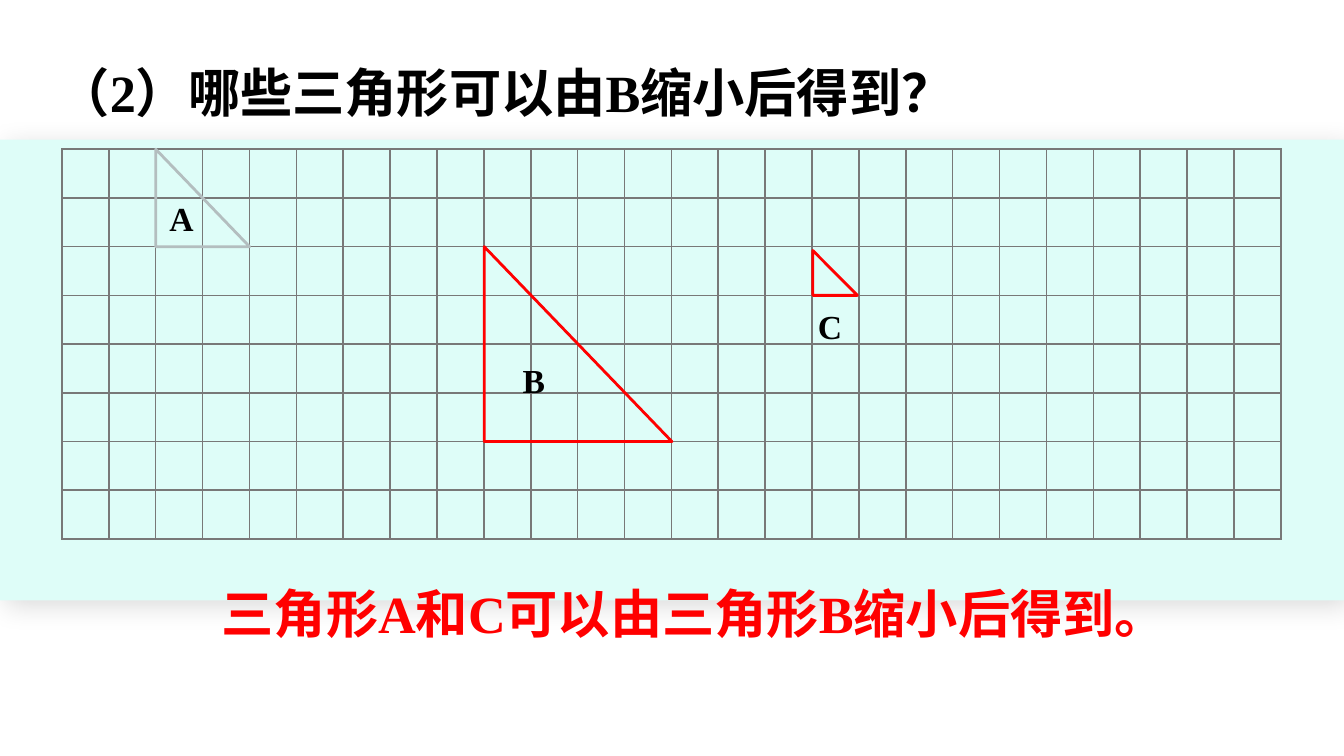
from dataclasses import dataclass

from lxml.etree import SubElement
from pptx import Presentation
from pptx.dml.color import RGBColor
from pptx.enum.shapes import MSO_SHAPE as Shape
from pptx.enum.text import MSO_AUTO_SIZE as AutoSize
from pptx.oxml.ns import qn
from pptx.util import Cm, Pt


@dataclass(frozen=True)
class Theme:
    band: str = "DEFDF8"
    grid: str = "787878"
    gray: str = "B3BEBF"
    red: str = "FF0000"
    black: str = "000000"
    font: str = "Times New Roman"
    sentence_size: int = 28
    label_size: int = 18
    grid_width: float = 1
    outline_width: float = 1.5


@dataclass(frozen=True)
class Grid:
    """Squared paper, in centimetres."""
    left: float = 1.17
    top: float = 2.82
    width: float = 23.06
    height: float = 7.37
    cols: int = 26
    rows: int = 8

    @property
    def cell_w(self) -> float:
        return self.width / self.cols

    @property
    def cell_h(self) -> float:
        return self.height / self.rows


@dataclass(frozen=True)
class Triangle:
    """Right-angled corner and size in grid cells, label place in centimetres."""
    name: str
    col: int
    row: int
    w: float
    h: float
    color: str
    label_left: float
    label_top: float


THEME = Theme()
GRID = Grid()
TRIANGLES = [
    Triangle("A", 2, 2, 2, 2, THEME.gray, 2.95, 3.61),
    Triangle("B", 9, 6, 4, 4, THEME.red, 9.63, 6.68),
    Triangle("C", 16, 3, 0.95, 0.92, THEME.red, 15.21, 5.66),
]


def rgb(color: str) -> RGBColor:
    return RGBColor.from_string(color)


def add_band(s) -> None:
    band = s.shapes.add_shape(Shape.RECTANGLE, 0, Cm(2.64), Cm(25.4), Cm(8.71))
    band.fill.solid()
    band.fill.fore_color.rgb = rgb(THEME.band)
    band.line.fill.background()
    effects = SubElement(band._element.spPr, qn("a:effectLst"))
    shadow = SubElement(effects, qn("a:outerShdw"), blurRad=str(Pt(15)),
                        dist=str(Pt(5)), dir=str(45 * 60000), rotWithShape="0")
    color = SubElement(shadow, qn("a:srgbClr"), val=THEME.black)
    SubElement(color, qn("a:alpha"), val="15000")


def set_borders(cell) -> None:
    tc_pr = cell._tc.get_or_add_tcPr()
    for side in ("lnL", "lnR", "lnT", "lnB"):
        ln = SubElement(tc_pr, qn(f"a:{side}"), w=str(Pt(THEME.grid_width)))
        SubElement(SubElement(ln, qn("a:solidFill")), qn("a:srgbClr"), val=THEME.grid)


def add_grid(s) -> None:
    frame = s.shapes.add_table(GRID.rows, GRID.cols, Cm(GRID.left), Cm(GRID.top),
                               Cm(GRID.width), Cm(GRID.height))
    table = frame.table
    table.first_row = table.horz_banding = False
    for col in table.columns:
        col.width = Cm(GRID.cell_w)
    for row in table.rows:
        row.height = Cm(GRID.cell_h)
    for cell in table.iter_cells():
        cell.margin_left = cell.margin_right = 0
        cell.margin_top = cell.margin_bottom = 0
        set_borders(cell)
        cell.fill.background()


def add_text(s, text: str, left: float, top: float, width: float, height: float,
             size: int, color: str = THEME.black, wrap: bool = True) -> None:
    tf = s.shapes.add_textbox(Cm(left), Cm(top), Cm(width), Cm(height)).text_frame
    tf.word_wrap = wrap
    tf.auto_size = AutoSize.SHAPE_TO_FIT_TEXT
    r = tf.paragraphs[0].add_run()
    r.text = text
    r.font.name = THEME.font
    r.font.size = Pt(size)
    r.font.bold = True
    r.font.color.rgb = rgb(color)


def add_triangle(s, t: Triangle) -> None:
    sp = s.shapes.add_shape(
        Shape.RIGHT_TRIANGLE,
        Cm(GRID.left + t.col * GRID.cell_w),
        Cm(GRID.top + (t.row - t.h) * GRID.cell_h),
        Cm(t.w * GRID.cell_w), Cm(t.h * GRID.cell_h))
    sp.shadow.inherit = False
    sp.fill.background()
    sp.line.color.rgb = rgb(t.color)
    sp.line.width = Pt(THEME.outline_width)
    add_text(s, t.name, t.label_left, t.label_top, 1.17, 1.02, THEME.label_size)


def main() -> None:
    prs = Presentation()
    prs.slide_width, prs.slide_height = Cm(25.4), Cm(14.29)
    s = prs.slides.add_slide(prs.slide_layouts[6])
    add_band(s)
    add_grid(s)
    for t in TRIANGLES:
        add_triangle(s, t)
    add_text(s, "（2）哪些三角形可以由B缩小后得到？", 0.84, 1.02, 17.55, 1.45,
             THEME.sentence_size, wrap=False)
    add_text(s, "三角形A和C可以由三角形B缩小后得到。", 3.94, 10.87, 19.25, 1.45,
             THEME.sentence_size, THEME.red)
    prs.save("out.pptx")


if __name__ == "__main__":
    main()
